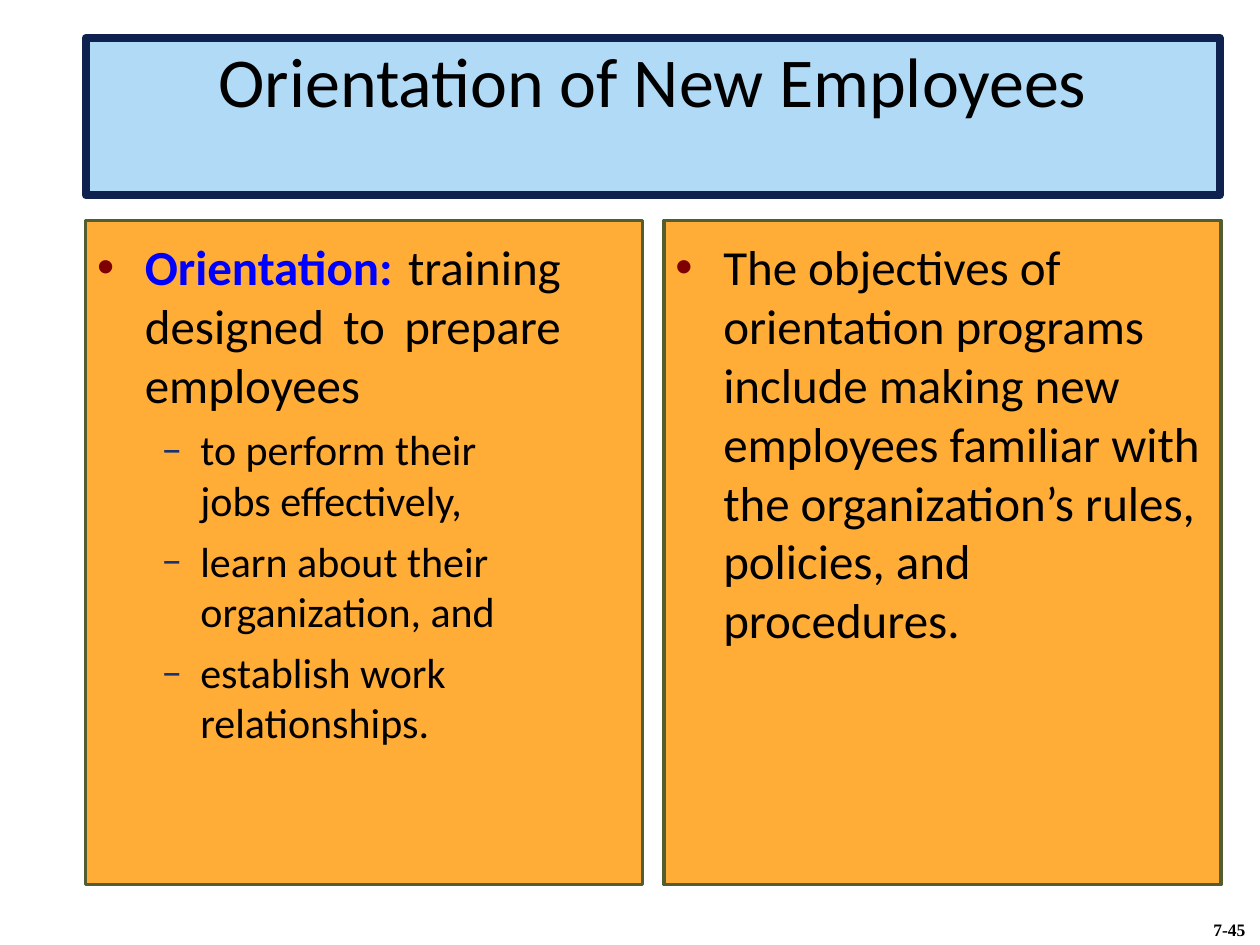
from dataclasses import dataclass

from lxml.etree import SubElement
from pptx import Presentation
from pptx.dml.color import RGBColor
from pptx.enum.shapes import MSO_SHAPE
from pptx.enum.text import MSO_ANCHOR, MSO_AUTO_SIZE, PP_ALIGN
from pptx.oxml.ns import qn
from pptx.util import Inches, Pt


@dataclass
class Level:
    size: int
    left: float
    hang: float
    right: float
    before: float
    char: str
    color: str
    font: str


@dataclass
class Item:
    level: Level
    text: str
    term: str = ""
    align: PP_ALIGN = PP_ALIGN.LEFT


@dataclass
class Panel:
    left: float
    inset_right: float
    items: list[Item]


POINT = Level(28, 0.38, 0.38, 0, 0, "•", "7F0000", "Arial")
DETAIL = Level(24, 0.82, 0.31, 0.2, 6, "–", "193273", "Calibri")

PANELS = [
    Panel(0.68, 0.65, [
        Item(POINT, "training designed to prepare employees", "Orientation: ",
             PP_ALIGN.JUSTIFY),
        Item(DETAIL, "to perform their jobs effectively,"),
        Item(DETAIL, "learn about their organization, and"),
        Item(DETAIL, "establish work relationships."),
    ]),
    Panel(5.27, 0.14, [
        Item(POINT, "The objectives of orientation programs include making new "
                    "employees familiar with the organization’s rules, policies, "
                    "and procedures."),
    ]),
]


def rgb(color: str) -> RGBColor:
    return RGBColor.from_string(color)


def apply(target, values: dict) -> None:
    for name, value in values.items():
        setattr(target, name, value)


def paint(sp, fill: str, line: str, width: float) -> None:
    sp.fill.solid()
    sp.fill.fore_color.rgb = rgb(fill)
    sp.line.color.rgb = rgb(line)
    sp.line.width = Pt(width)


def frame(sp, left: float = 0, top: float = 0, right: float = 0):
    tf = sp.text_frame
    apply(tf, {
        "margin_left": Inches(left), "margin_top": Inches(top),
        "margin_right": Inches(right), "margin_bottom": 0,
        "word_wrap": True, "auto_size": MSO_AUTO_SIZE.NONE,
        "vertical_anchor": MSO_ANCHOR.TOP,
    })
    return tf


def add_run(p, text: str, size: float, color: str = "000000",
            font: str = "Calibri", bold: bool = False) -> None:
    r = p.add_run()
    r.text = text
    apply(r.font, {"name": font, "size": Pt(size), "bold": bold})
    r.font.color.rgb = rgb(color)


def add_bullet(p, level: Level) -> None:
    pPr = p._p.get_or_add_pPr()
    pPr.set("marL", str(Inches(level.left)))
    pPr.set("marR", str(Inches(level.right)))
    pPr.set("indent", str(-Inches(level.hang)))
    clr = SubElement(pPr, qn("a:buClr"))
    SubElement(clr, qn("a:srgbClr"), val=level.color)
    SubElement(pPr, qn("a:buFont"), typeface=level.font)
    SubElement(pPr, qn("a:buChar"), char=level.char)


def add_panel(s, panel: Panel) -> None:
    sp = s.shapes.add_shape(MSO_SHAPE.RECTANGLE, Inches(panel.left), Inches(1.75),
                            Inches(4.42), Inches(5.27))
    sp.shadow.inherit = False
    paint(sp, "FFAD36", "535D32", 2)
    tf = frame(sp, 0.09, 0.13, panel.inset_right)
    for i, item in enumerate(panel.items):
        p = tf.add_paragraph() if i else tf.paragraphs[0]
        add_bullet(p, item.level)
        apply(p, {"alignment": item.align, "space_before": Pt(item.level.before)})
        if item.term:
            add_run(p, item.term, item.level.size, "0000FF", bold=True)
        add_run(p, item.text, item.level.size)


def add_title(s, text: str) -> None:
    sp = s.shapes.title
    apply(sp, {"left": Inches(0.68), "top": Inches(0.3),
               "width": Inches(9), "height": Inches(1.25)})
    paint(sp, "B0DAF5", "0F214E", 4.5)
    p = frame(sp).paragraphs[0]
    p.alignment = PP_ALIGN.CENTER
    add_run(p, text, 40)


def add_page_number(s, text: str) -> None:
    sp = s.shapes.add_textbox(Inches(9.63), Inches(7.29), Inches(0.3), Inches(0.17))
    p = frame(sp).paragraphs[0]
    add_run(p, text, 10, font="Times New Roman", bold=True)


def main() -> None:
    prs = Presentation()
    apply(prs, {"slide_width": Inches(10), "slide_height": Inches(7.5)})
    s = prs.slides.add_slide(prs.slide_layouts[5])
    add_title(s, "Orientation of New Employees")
    for panel in PANELS:
        add_panel(s, panel)
    add_page_number(s, "7-45")
    prs.save("out.pptx")


if __name__ == "__main__":
    main()
